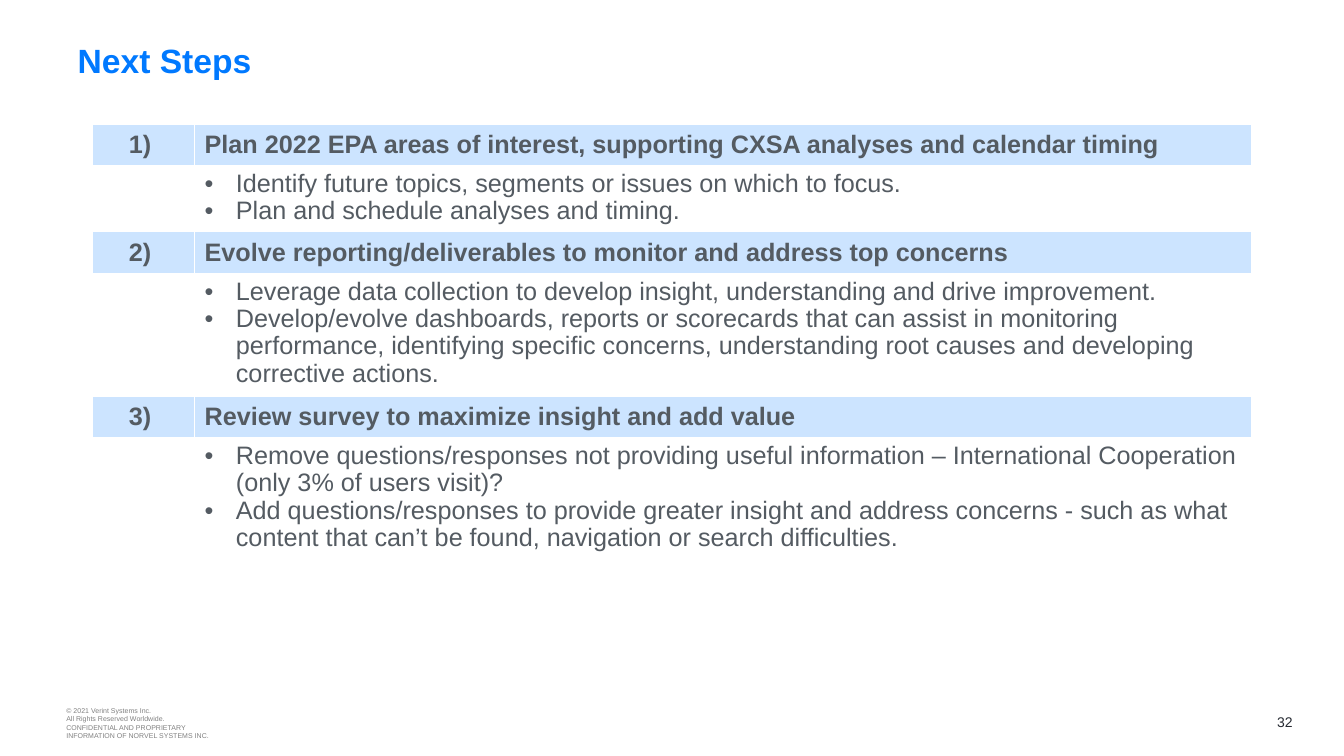
from lxml import etree
from pptx import Presentation
from pptx import util as u
from pptx.dml.color import RGBColor
from pptx.enum import text
from pptx.oxml import ns


def add_run(paragraph, words, size, color, bold=False):
    run = paragraph.add_run()
    run.text = words
    run.font.name = "Arial"
    run.font.size = u.Pt(size)
    run.font.bold = bold
    run.font.color.rgb = RGBColor.from_string(color)


def add_lines(frame, lines, size, color, align=text.PP_ALIGN.LEFT, bold=False, bullet=False, spacing=1.0):
    frame.word_wrap = True
    for index, line in enumerate(lines):
        paragraph = frame.paragraphs[0] if index == 0 else frame.add_paragraph()
        paragraph.alignment = align
        paragraph.line_spacing = spacing
        if bullet:
            properties = paragraph._p.get_or_add_pPr()
            properties.set("marL", str(u.Inches(0.31)))
            properties.set("indent", str(-u.Inches(0.31)))
            etree.SubElement(properties, ns.qn("a:buFont")).set("typeface", "Arial")
            etree.SubElement(properties, ns.qn("a:buChar")).set("char", "•")
        add_run(paragraph, line, size, color, bold)


GRAY = "545B62"
BAND = "CCE4FF"
STEPS = [
    ("Plan 2022 EPA areas of interest, supporting CXSA analyses and calendar timing", 0.66, [
        "Identify future topics, segments or issues on which to focus.",
        "Plan and schedule analyses and timing.",
    ]),
    ("Evolve reporting/deliverables to monitor and address top concerns", 1.22, [
        "Leverage data collection to develop insight, understanding and drive improvement.",
        "Develop/evolve dashboards, reports or scorecards that can assist in monitoring performance, "
        "identifying specific concerns, understanding root causes and developing corrective actions.",
    ]),
    ("Review survey to maximize insight and add value", 1.22, [
        "Remove questions/responses not providing useful information – International Cooperation "
        "(only 3% of users visit)?",
        "Add questions/responses to provide greater insight and address concerns - such as what "
        "content that can’t be found, navigation or search difficulties.",
    ]),
]
FOOTERS = [
    (0.56, 6.94, 2.4, 5, "808080", text.PP_ALIGN.LEFT, [
        "© 2021 Verint Systems Inc.",
        "All Rights Reserved Worldwide.",
        "CONFIDENTIAL AND PROPRIETARY",
        "INFORMATION OF NORVEL SYSTEMS INC.",
    ]),
    (11.81, 6.93, 1.11, 10, "262A32", text.PP_ALIGN.RIGHT, ["32"]),
]

presentation = Presentation()
presentation.slide_width = u.Inches(13.33)
presentation.slide_height = u.Inches(7.5)
slide = presentation.slides.add_slide(presentation.slide_layouts[5])

title = slide.shapes.title
title.left, title.top = u.Inches(0.67), u.Inches(0.35)
title.width, title.height = u.Inches(12.2), u.Inches(0.9)
title.text_frame.vertical_anchor = text.MSO_ANCHOR.TOP
add_lines(title.text_frame, ["Next Steps"], 24, "0079FF", bold=True)

table = slide.shapes.add_table(
    2 * len(STEPS), 2, u.Inches(0.92), u.Inches(1.23), u.Inches(11.49), u.Inches(4.33)
).table
table.first_row = False
table.horz_banding = False
table.columns[0].width = u.Inches(1.01)
table.columns[1].width = u.Inches(10.48)

for index, (heading, height, points) in enumerate(STEPS):
    heading_row, points_row = 2 * index, 2 * index + 1
    table.rows[heading_row].height = u.Inches(0.41)
    table.rows[points_row].height = u.Inches(height)
    for column in range(2):
        heading_cell = table.cell(heading_row, column)
        heading_cell.fill.solid()
        heading_cell.fill.fore_color.rgb = RGBColor.from_string(BAND)
        heading_cell.vertical_anchor = text.MSO_ANCHOR.MIDDLE
        table.cell(points_row, column).fill.background()
    number_frame = table.cell(heading_row, 0).text_frame
    add_lines(number_frame, [f"{index + 1}) "], 18, GRAY, text.PP_ALIGN.CENTER, bold=True)
    add_lines(table.cell(heading_row, 1).text_frame, [heading], 18, GRAY, bold=True)
    add_lines(table.cell(points_row, 1).text_frame, points, 18, GRAY, bullet=True, spacing=0.97)

for left, top, width, size, color, align, lines in FOOTERS:
    footer = slide.shapes.add_textbox(u.Inches(left), u.Inches(top), u.Inches(width), u.Inches(0.47))
    footer.text_frame.vertical_anchor = text.MSO_ANCHOR.MIDDLE
    add_lines(footer.text_frame, lines, size, color, align)

presentation.save("out.pptx")
